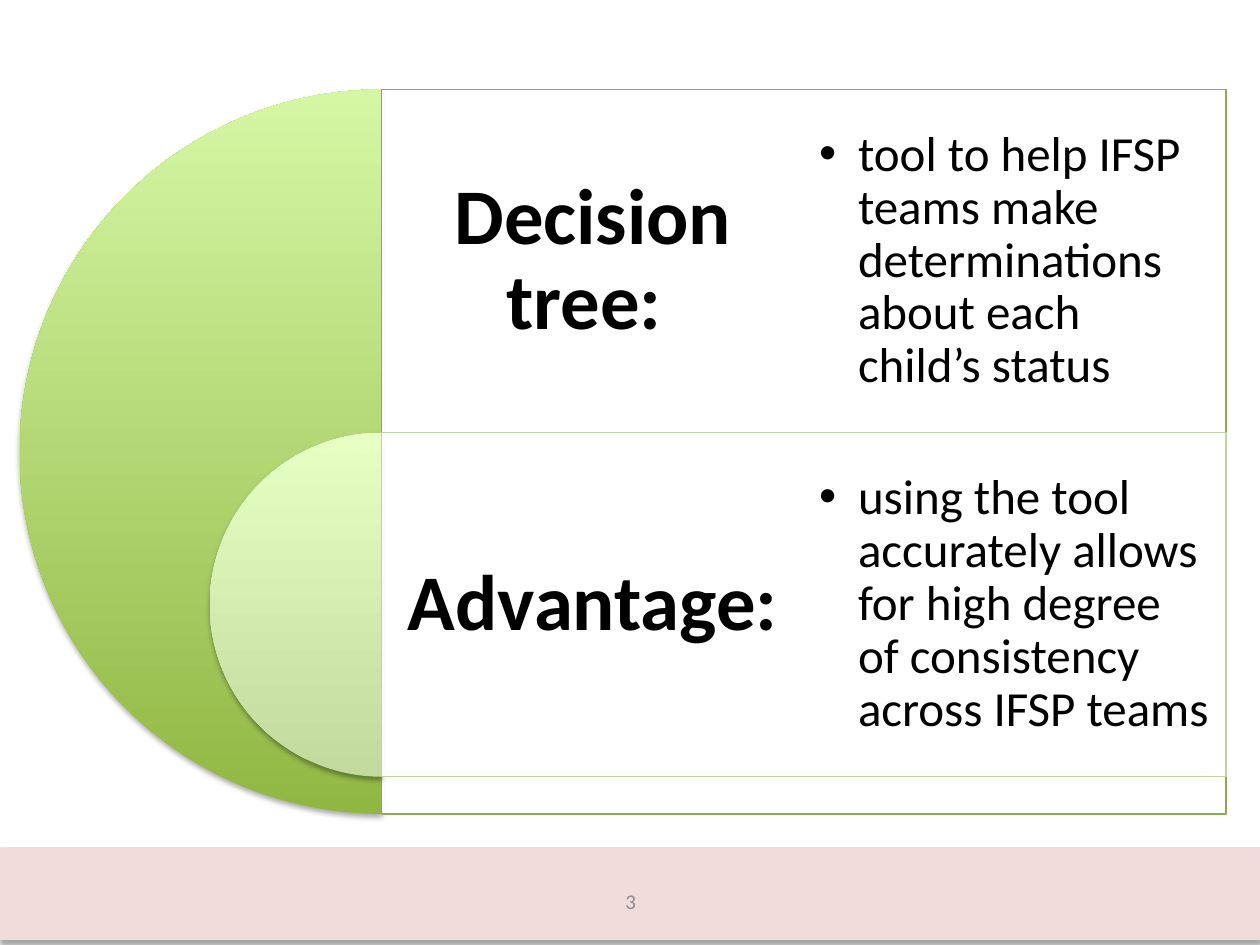
from lxml import etree
from pptx import Presentation
from pptx.dml.color import RGBColor
from pptx.enum import shapes, text
from pptx.oxml.ns import qn
from pptx.util import Inches, Pt

ROWS = [
    dict(head="Decision tree: ",
         note="tool to help IFSP teams make determinations about each child’s status",
         size=5.75, grad=("91B743", "D5F7A5"), edge="8DAA51"),
    dict(head="Advantage: ",
         note="using the tool accurately allows for high degree of consistency across IFSP teams",
         size=2.73, grad=("C3DA9E", "E6FFC3"), edge="C1D3A5"),
]
PAGE = "3"
LEFT, TOP, COL, ROW = 3.03, 0.71, 3.35, 2.725
HEAD = dict(size=Pt(45), bold=True)
NOTE = dict(size=Pt(28))
FOOT = dict(size=Pt(12))
KIND = shapes.MSO_SHAPE

deck = Presentation()
deck.slide_width, deck.slide_height = Inches(10), Inches(7.5)
slide = deck.slides.add_slide(deck.slide_layouts[6])


def color(code):
    return RGBColor.from_string(code)


def sub(node, tag, **attrs):
    child = etree.SubElement(node, qn(tag))
    for key, value in attrs.items():
        child.set(key, str(value))
    return child


def shape(kind, *box):
    item = slide.shapes.add_shape(kind, *map(Inches, box))
    item.shadow.inherit = False
    return item


def shade(item):
    glow = sub(item._element.spPr.find(qn("a:effectLst")), "a:outerShdw",
               blurRad=Pt(3.1), dist=Pt(1.8), dir=5400000, rotWithShape=0)
    sub(sub(glow, "a:srgbClr", val="000000"), "a:alpha", val=35000)


def panel(box, fill, edge):
    item = shape(KIND.RECTANGLE, *box)
    item.fill.solid()
    item.fill.fore_color.rgb = color(fill)
    item.line.color.rgb = color(edge)
    item.line.width = Pt(0.75)
    return item


def disc(top, size, grad):
    item = shape(KIND.PIE, LEFT - size / 2, top, size, size)
    item.adjustments[0], item.adjustments[1] = 54, 162
    item.fill.gradient()
    item.fill.gradient_angle = 90
    for stop, code in zip(item.fill.gradient_stops, grad):
        stop.color.rgb = color(code)
    item.line.fill.background()
    shade(item)


def label(words, box, inset, font, tint="000000", bullet=False, space=0.9):
    frame = slide.shapes.add_textbox(*map(Inches, box)).text_frame
    form = dict(word_wrap=True, vertical_anchor=text.MSO_ANCHOR.MIDDLE)
    form.update({"margin_" + side: Inches(inset)
                 for side in ("left", "top", "right", "bottom")})
    for key, value in form.items():
        setattr(frame, key, value)
    para = frame.paragraphs[0]
    para.line_spacing = space
    if bullet:
        props = para._p.get_or_add_pPr()
        props.set("marL", str(Inches(0.31)))
        props.set("indent", str(-Inches(0.31)))
        sub(props, "a:buFont", typeface="Arial")
        sub(props, "a:buChar", char="•")
    else:
        para.alignment = text.PP_ALIGN.CENTER
    run = para.add_run()
    run.text = words
    for key, value in dict(font, name="Calibri").items():
        setattr(run.font, key, value)
    run.font.color.rgb = color(tint)


shade(panel((0, 6.73, 10, 0.73), "F2DCDB", "F2DCDB"))
label(PAGE, (3.42, 6.95, 3.17, 0.4), 0.05, FOOT, "8C8C8C", space=1.0)

for i, row in enumerate(ROWS):
    top = TOP + i * ROW
    disc(top, row["size"], row["grad"])
    band = panel((LEFT, top, 2 * COL, row["size"]), "FFFFFF", row["edge"])
    tone = band._element.spPr.find(qn("a:solidFill")).find(qn("a:srgbClr"))
    sub(tone, "a:alpha", val=90000)
    label(row["head"], (LEFT, top, COL, ROW), 0.19, HEAD)
    label(row["note"], (LEFT + COL, top, COL, ROW), 0.12, NOTE, bullet=True)

deck.save("out.pptx")
